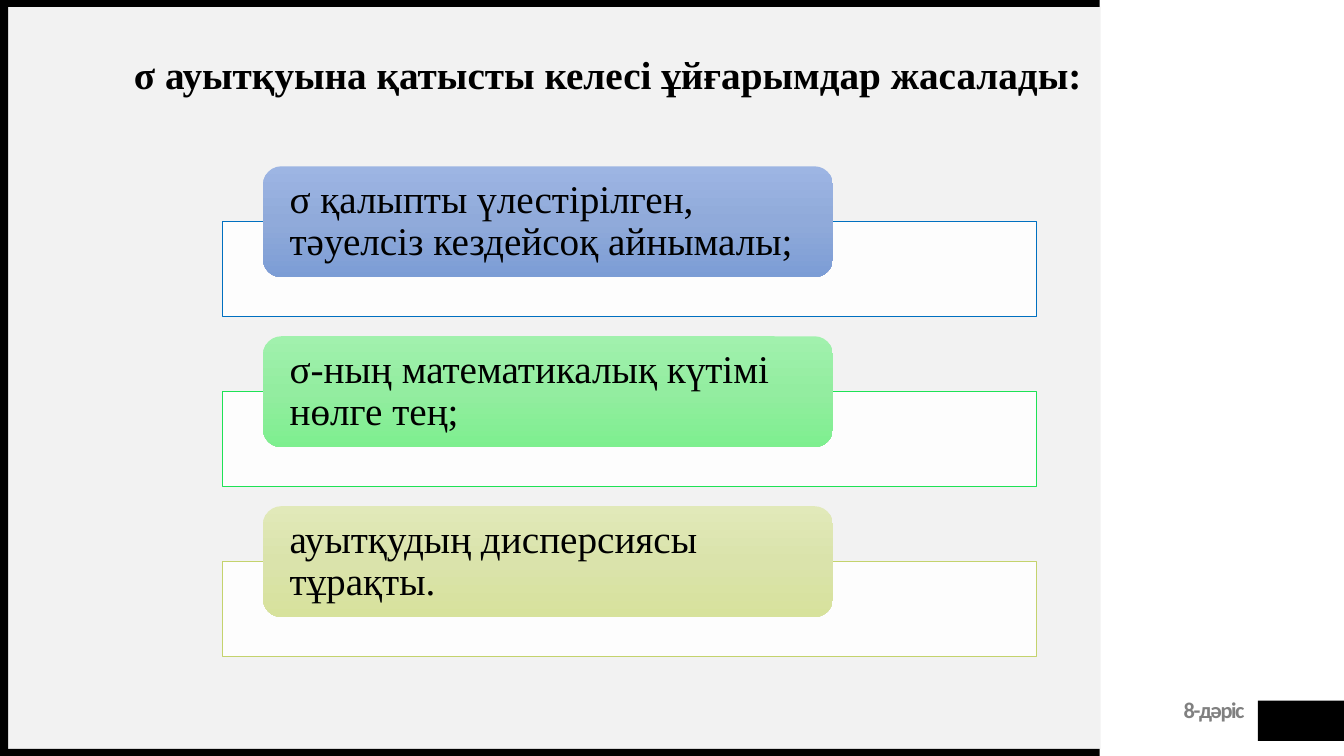
from lxml.etree import SubElement
from pptx import Presentation
from pptx.dml.color import RGBColor as RGB
from pptx.enum.shapes import MSO_SHAPE as SHAPE
from pptx.enum.text import MSO_ANCHOR as ANCHOR, PP_ALIGN as ALIGN
from pptx.oxml import parse_xml
from pptx.oxml.ns import nsdecls, qn
from pptx.util import Pt

TITLE = "σ ауытқуына қатысты келесі ұйғарымдар жасалады:"
FOOTER = "8-дәріс"
SERIF, SANS = "Times New Roman", "Calibri"
COLORS = {"panel": "F2F2F2", "black": "000000", "white": "FFFFFF", "grey": "808080",
          "blue": "0070C0", "green": "1EE255", "olive": "C4D36D"}
# text, frame colour, gradient from top to bottom
ITEMS = [
    ("σ қалыпты үлестірілген, тәуелсіз кездейсоқ айнымалы;", "blue",
     ("9DB5E3", "90AADA", "7C9DD5")),
    ("σ-ның математикалық күтімі нөлге тең;", "green",
     ("A1F1AD", "93EDA0", "7EEF8F")),
    ("ауытқудың дисперсиясы тұрақты.", "olive",
     ("E1E9B9", "DAE3AB", "D7E29C")),
]
# left, top, width, height, colour
BLOCKS = [
    (5.8, 5, 780.5, 530, "panel"),
    (898.5, 500.4, 61.5, 28.8, "black"),
    (0, 535, 785.5, 5, "black"),
    (0, 0, 785.5, 5, "black"),
    (0, 2.5, 5.8, 537.5, "black"),
]
TOP, STEP = 118.8, 121.4


def color(name):
    return RGB.from_string(COLORS[name])


def add_box(slide, kind, *box):
    shape = slide.shapes.add_shape(kind, *map(Pt, box))
    shape.shadow.inherit = False
    shape.line.fill.background()
    return shape


def add_block(slide, *box, tint):
    shape = add_box(slide, SHAPE.RECTANGLE, *box)
    shape.fill.solid()
    shape.fill.fore_color.rgb = color(tint)
    return shape


def set_text(frame, text, size, font, tint, insets, bold=False):
    """Fill the frame; insets are left, top, right and bottom."""
    (frame.margin_left, frame.margin_top,
     frame.margin_right, frame.margin_bottom) = map(Pt, insets)
    para = frame.paragraphs[0]
    para.text = text
    para.font.size, para.font.name = Pt(size), font
    para.font.bold, para.font.color.rgb = bold, color(tint)
    return para


def fade(shape, tints):
    """Fill with an even vertical gradient of any number of colours."""
    last = len(tints) - 1
    stops = "".join(
        f'<a:gs pos="{100000 * i // last}"><a:srgbClr val="{tint}"/></a:gs>'
        for i, tint in enumerate(tints))
    grad = parse_xml(f'<a:gradFill {nsdecls("a")}><a:gsLst>{stops}</a:gsLst>'
                     '<a:lin ang="5400000" scaled="0"/></a:gradFill>')
    shape.element.spPr.find(qn("a:prstGeom")).addnext(grad)


def add_item(slide, top, text, edge, tints):
    frame = add_block(slide, 158.6, top + 39.4, 581.6, 68, tint="white")
    tint = frame.element.spPr.find(qn("a:solidFill")).find(qn("a:srgbClr"))
    SubElement(tint, qn("a:alpha"), val="90000")
    frame.line.color.rgb = color(edge)
    frame.line.width = Pt(0.5)

    pill = add_box(slide, SHAPE.ROUNDED_RECTANGLE, 187.8, top, 407.2, 79.2)
    fade(pill, tints)
    body = pill.text_frame
    body.word_wrap, body.vertical_anchor = True, ANCHOR.MIDDLE
    para = set_text(body, text, 28, SERIF, "black", (15.2, 0, 15.2, 0))
    para.alignment, para.line_spacing = ALIGN.LEFT, 0.9


def main():
    deck = Presentation()
    deck.slide_width, deck.slide_height = Pt(960), Pt(540)
    slide = deck.slides.add_slide(deck.slide_layouts[6])

    for *box, tint in BLOCKS:
        add_block(slide, *box, tint=tint)

    foot = slide.shapes.add_textbox(*map(Pt, (758, 499.7, 131, 18))).text_frame
    foot.word_wrap = True
    para = set_text(foot, FOOTER, 16, SANS, "grey", (0, 2.9, 0, 0), bold=True)
    para.alignment, para.line_spacing = ALIGN.RIGHT, Pt(14)
    para.runs[0].font._element.set("spc", "-100")

    for i, item in enumerate(ITEMS):
        add_item(slide, TOP + i * STEP, *item)

    head = slide.shapes.add_textbox(*map(Pt, (88.6, 32.4, 698.4, 41))).text_frame
    head.word_wrap = False
    set_text(head, TITLE, 28, SERIF, "black", (7.2, 3.6, 7.2, 3.6), bold=True)

    deck.save("out.pptx")


if __name__ == "__main__":
    main()
